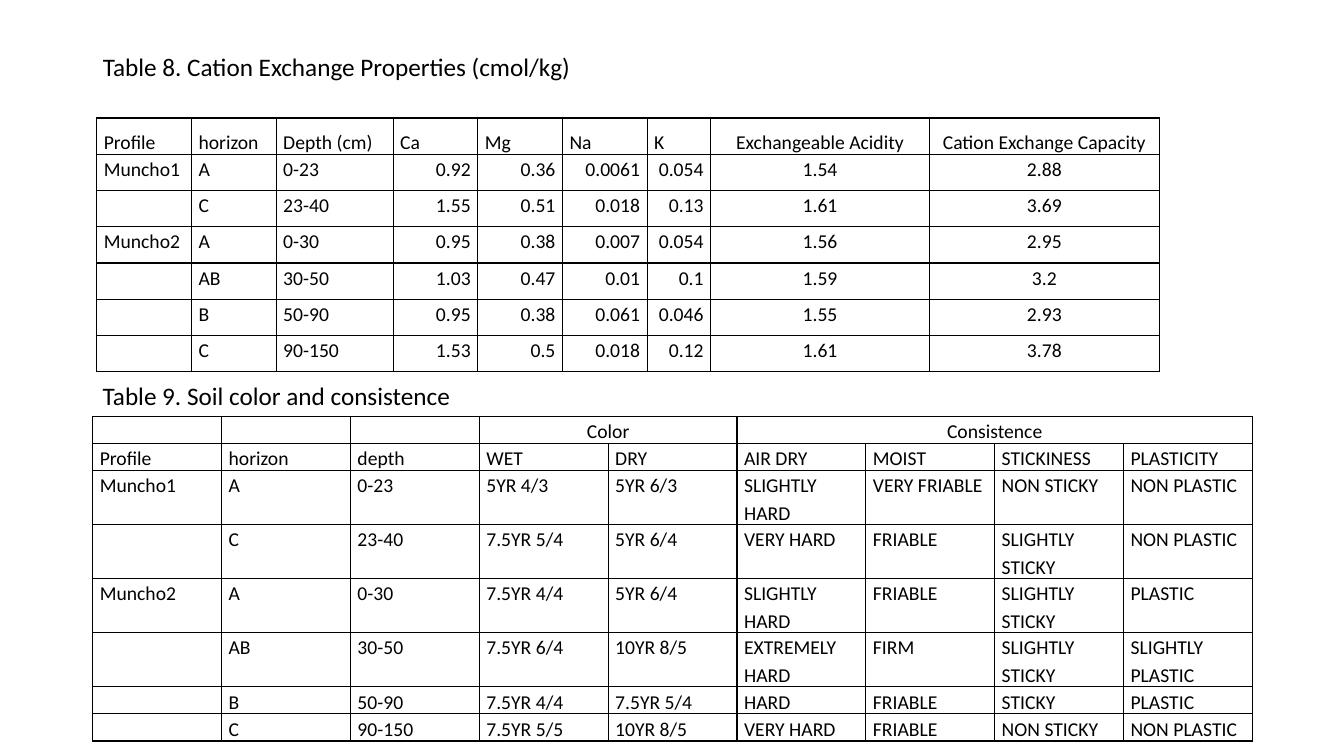
"""Build a slide with two soil data tables: cation exchange, and colour with consistence."""
import pptx
import pptx.dml.color
import pptx.enum.text
import pptx.oxml.ns
import pptx.util
from lxml import etree

Inches = pptx.util.Inches
Pt = pptx.util.Pt
ALIGN = pptx.enum.text.PP_ALIGN
ANCHOR = pptx.enum.text.MSO_ANCHOR
COLORS = {"ink": "000000"}
FONT = "Calibri"
LEFT = 0.92
INK = pptx.dml.color.RGBColor.from_string(COLORS["ink"])


def write_caption(caption, text, top, width):
    caption.left, caption.top = Inches(LEFT), Inches(top)
    caption.width, caption.height = Inches(width), Inches(0.4)
    frame = caption.text_frame
    frame.text = text
    frame.word_wrap = False
    frame.auto_size = pptx.enum.text.MSO_AUTO_SIZE.SHAPE_TO_FIT_TEXT
    frame.vertical_anchor = ANCHOR.TOP
    paragraph = frame.paragraphs[0]
    paragraph.alignment = ALIGN.LEFT
    font = paragraph.runs[0].font
    font.name, font.size, font.color.rgb = FONT, Pt(18), INK


def draw_table(left, top, widths, row_height, records, header_rows, alignment_of):
    table = slide.shapes.add_table(
        len(records), len(widths), Inches(left), Inches(top),
        Inches(sum(widths)), Inches(row_height * len(records))).table
    table.first_row = table.horz_banding = False
    for column, width in zip(table.columns, widths):
        column.width = Inches(width)
    for r, record in enumerate(records):
        table.rows[r].height = Inches(row_height)
        for c, value in enumerate(record):
            cell = table.cell(r, c)
            cell.margin_left = cell.margin_right = Inches(0.07)
            cell.margin_top = cell.margin_bottom = 0
            cell.vertical_anchor = ANCHOR.BOTTOM if r < header_rows else ANCHOR.TOP
            cell.text = value
            paragraph = cell.text_frame.paragraphs[0]
            paragraph.alignment = alignment_of(r, c)
            paragraph.line_spacing = 1.15
            for run in paragraph.runs:
                run.font.name, run.font.size, run.font.color.rgb = FONT, Pt(14), INK
            if not value:
                paragraph._p.get_or_add_endParaRPr().set("sz", "1400")
            properties = cell._tc.get_or_add_tcPr()
            for side in ("lnL", "lnR", "lnT", "lnB"):
                border = etree.SubElement(properties, pptx.oxml.ns.qn("a:" + side), w=str(Pt(1)))
                fill = etree.SubElement(border, pptx.oxml.ns.qn("a:solidFill"))
                etree.SubElement(fill, pptx.oxml.ns.qn("a:srgbClr"), val=COLORS["ink"])
            cell.fill.background()
    return table


presentation = pptx.Presentation()
presentation.slide_width, presentation.slide_height = Inches(13.33), Inches(7.5)
slide = presentation.slides.add_slide(presentation.slide_layouts[5])

write_caption(slide.shapes.title, "Table 8. Cation Exchange Properties (cmol/kg)", 0.46, 4.89)

cation_records = [
    ["Profile", "horizon", "Depth (cm)", "Ca", "Mg", "Na", "K",
     "Exchangeable Acidity", "Cation Exchange Capacity"],
    ["Muncho1", "A", "0-23", "0.92", "0.36", "0.0061", "0.054", "1.54", "2.88"],
    ["", "C", "23-40", "1.55", "0.51", "0.018", "0.13", "1.61", "3.69"],
    ["Muncho2", "A", "0-30", "0.95", "0.38", "0.007", "0.054", "1.56", "2.95"],
    ["", "AB", "30-50", "1.03", "0.47", "0.01", "0.1", "1.59", "3.2"],
    ["", "B", "50-90", "0.95", "0.38", "0.061", "0.046", "1.55", "2.93"],
    ["", "C", "90-150", "1.53", "0.5", "0.018", "0.12", "1.61", "3.78"],
]
cation_widths = [0.94, 0.84, 1.16, 0.84, 0.84, 0.84, 0.63, 2.17, 2.28]
draw_table(0.96, 1.17, cation_widths, 0.36, cation_records, 1,
           lambda r, c: ALIGN.CENTER if c > 6 else ALIGN.RIGHT if r > 0 and c > 2 else ALIGN.LEFT)

consistence_records = [
    ["", "", "", "Color", "", "Consistence", "", "", ""],
    ["Profile", "horizon", "depth", "WET", "DRY", "AIR DRY", "MOIST", "STICKINESS", "PLASTICITY"],
    ["Muncho1", "A", "0-23", "5YR 4/3", "5YR 6/3",
     "SLIGHTLY HARD", "VERY FRIABLE", "NON STICKY", "NON PLASTIC"],
    ["", "C", "23-40", "7.5YR 5/4", "5YR 6/4",
     "VERY HARD", "FRIABLE", "SLIGHTLY STICKY", "NON PLASTIC"],
    ["Muncho2", "A", "0-30", "7.5YR 4/4", "5YR 6/4",
     "SLIGHTLY HARD", "FRIABLE", "SLIGHTLY STICKY", "PLASTIC"],
    ["", "AB", "30-50", "7.5YR 6/4", "10YR 8/5",
     "EXTREMELY HARD", "FIRM", "SLIGHTLY STICKY", "SLIGHTLY PLASTIC"],
    ["", "B", "50-90", "7.5YR 4/4", "7.5YR 5/4", "HARD", "FRIABLE", "STICKY", "PLASTIC"],
    ["", "C", "90-150", "7.5YR 5/5", "10YR 8/5",
     "VERY HARD", "FRIABLE", "NON STICKY", "NON PLASTIC"],
]
consistence = draw_table(LEFT, 4.13, [1.278] * 9, 0.21, consistence_records, 2,
                         lambda r, c: ALIGN.CENTER if r == 0 else ALIGN.LEFT)
for first, last in ((3, 4), (5, 8)):
    consistence.cell(0, first).merge(consistence.cell(0, last))

consistence_caption = slide.shapes.add_textbox(0, 0, 0, 0)
write_caption(consistence_caption, "Table 9. Soil color and consistence", 3.72, 3.74)
consistence_caption.text_frame.paragraphs[0].space_after = Pt(10)

presentation.save("out.pptx")
